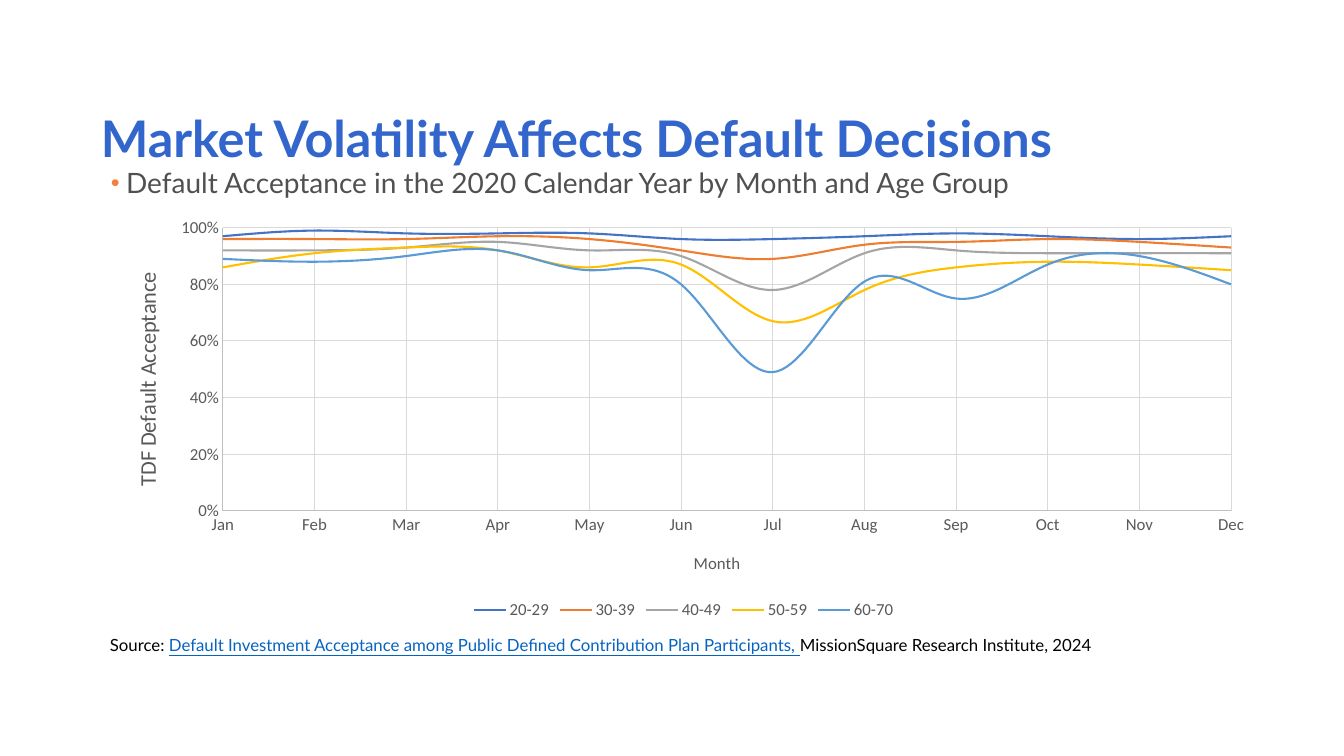
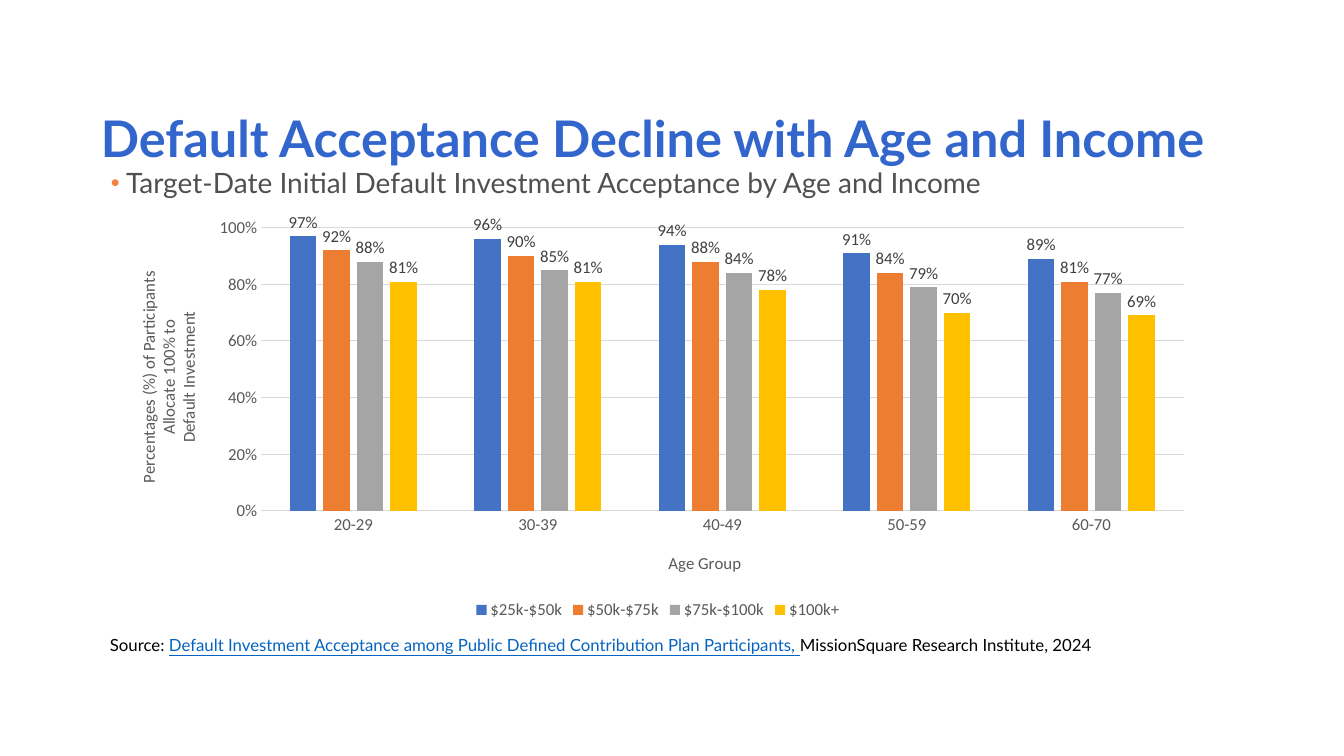
from dataclasses import dataclass

from lxml.etree import SubElement
from pptx import Presentation
from pptx.chart.data import CategoryChartData
from pptx.dml.color import RGBColor
from pptx.enum.chart import (XL_CHART_TYPE as Kind, XL_LABEL_POSITION as LabelPosition,
                             XL_LEGEND_POSITION as LegendPosition, XL_TICK_MARK as Tick)
from pptx.enum.text import MSO_ANCHOR as Anchor, MSO_AUTO_SIZE as AutoSize, PP_ALIGN as Align
from pptx.oxml.ns import qn
from pptx.util import Pt

PX = 9144  # EMU; 100 px to the inch


@dataclass(frozen=True)
class Theme:
    text_font: str = "Lato"
    chart_font: str = "Calibri"
    title: str = "3366CC"
    body: str = "505050"
    bullet: str = "F28041"
    source: str = "000000"
    link: str = "0563C1"
    axis_text: str = "595959"
    label_text: str = "404040"
    axis_line: str = "BFBFBF"
    grid: str = "D9D9D9"
    series: tuple = ("4472C4", "ED7D31", "A5A5A5", "FFC000", "5B9BD5")
    title_size: int = 36
    body_size: int = 20
    axis_title_size: int = 16
    small_size: int = 12


def rgb(code):
    return RGBColor.from_string(code)


def style_font(font, name, size, color, bold=False):
    font.name, font.size, font.bold = name, Pt(size), bold
    font.color.rgb = rgb(color)


def style_line(line, color, width=0.75):
    line.color.rgb = rgb(color)
    line.width = Pt(width)


def set_layout(parent, frame, left, top, width=None, height=None):
    """Fix a chart part at slide px, written as fractions of the chart frame."""
    layout = parent.find(qn("c:layout"))
    if layout is None:
        layout = SubElement(parent, qn("c:layout"))
        text = parent.find(qn("c:tx"))
        if text is None:
            parent.insert(0, layout)
        else:
            text.addnext(layout)
    for old in list(layout):
        layout.remove(old)
    manual = SubElement(layout, qn("c:manualLayout"))
    values = {"xMode": "edge", "yMode": "edge",
              "x": (left * PX - frame.left) / frame.width,
              "y": (top * PX - frame.top) / frame.height}
    if width:
        values = {"layoutTarget": "inner", **values,
                  "w": width * PX / frame.width, "h": height * PX / frame.height}
    for tag, value in values.items():
        SubElement(manual, qn(f"c:{tag}")).set("val", str(value))


class Deck:
    def __init__(self, theme):
        self.theme = theme
        self.file = Presentation()
        self.file.slide_width, self.file.slide_height = 1333 * PX, 750 * PX
        self.page = None

    def add_page(self, title, subtitle):
        self.page = self.file.slides.add_slide(self.file.slide_layouts[1])
        self.add_title(title)
        self.add_bullet(subtitle)
        self.add_source()

    def prepare(self, box, left, top, width, height, anchor=Anchor.TOP):
        """Place a text shape without insets and return its first paragraph."""
        box.left, box.top, box.width, box.height = (n * PX for n in (left, top, width, height))
        frame = box.text_frame
        frame.margin_left = frame.margin_right = frame.margin_top = frame.margin_bottom = 0
        frame.word_wrap, frame.auto_size, frame.vertical_anchor = True, AutoSize.NONE, anchor
        para = frame.paragraphs[0]
        para.alignment, para.space_before = Align.LEFT, Pt(0)
        return para

    def add_span(self, para, text, size, color, bold=False):
        span = para.add_run()
        span.text = text
        style_font(span.font, self.theme.text_font, size, color, bold)
        return span

    def add_title(self, text):
        para = self.prepare(self.page.shapes.title, 100, 100, 1115, 130)
        para.line_spacing = 1.1
        self.add_span(para, text, self.theme.title_size, self.theme.title, True)

    def add_bullet(self, text):
        para = self.prepare(self.page.placeholders[1], 100, 161, 1116, 48)
        props = para._p.get_or_add_pPr()
        props.set("marL", str(25 * PX))
        props.set("indent", str(-15 * PX))
        color = SubElement(props, qn("a:buClr"))
        SubElement(color, qn("a:srgbClr")).set("val", self.theme.bullet)
        SubElement(props, qn("a:buSzPct")).set("val", "90000")
        SubElement(props, qn("a:buFont")).set("typeface", "Arial")
        SubElement(props, qn("a:buChar")).set("char", "•")
        para.line_spacing, para.space_after = 1.1, Pt(6)
        self.add_span(para, text, self.theme.body_size, self.theme.body)

    def add_source(self):
        theme = self.theme
        box = self.page.shapes.add_textbox(0, 0, PX, PX)
        para = self.prepare(box, 109, 614, 1035, 36, Anchor.BOTTOM)
        para.line_spacing = 0.9
        self.add_span(para, "Source: ", theme.small_size, theme.source)
        link = self.add_span(para, "Default Investment Acceptance among Public Defined "
                             "Contribution Plan Participants, ", theme.small_size, theme.link)
        link.font.underline = True
        self.add_span(para, "MissionSquare Research Institute, 2024",
                      theme.small_size, theme.source)

    def add_chart(self, kind, place, plot_area, categories, series):
        """Add a percentage chart; return its frame."""
        theme = self.theme
        data = CategoryChartData(number_format="0%")
        data.categories = categories
        for name, percents in series.items():
            data.add_series(name, [percent / 100 for percent in percents])
        frame = self.page.shapes.add_chart(kind, *(n * PX for n in place), data)
        chart = frame.chart
        style_font(chart.font, theme.chart_font, theme.small_size, theme.source)
        chart.has_title = False
        chart.has_legend = True
        chart.legend.position = LegendPosition.BOTTOM
        chart.legend.include_in_layout = False
        style_font(chart.legend.font, theme.chart_font, theme.small_size, theme.axis_text)
        chart.plots[0].vary_by_categories = False
        for axis in (chart.category_axis, chart.value_axis):
            axis.major_tick_mark = axis.minor_tick_mark = Tick.NONE
            style_font(axis.tick_labels.font, theme.chart_font, theme.small_size,
                       theme.axis_text)
        values = chart.value_axis
        values.minimum_scale, values.maximum_scale, values.major_unit = 0, 1, 0.2
        values.tick_labels.number_format = "0%"
        values.tick_labels.number_format_is_linked = False
        values.has_major_gridlines = True
        style_line(values.major_gridlines.format.line, theme.grid)
        set_layout(chart.element.xpath(".//c:plotArea")[0], frame, *plot_area)
        return frame

    def add_axis_title(self, frame, axis, lines, left, top, size):
        axis.has_title = True
        text = axis.axis_title.text_frame
        for index, line in enumerate(lines):
            para = text.add_paragraph() if index else text.paragraphs[0]
            span = para.add_run()
            span.text = line
            style_font(span.font, self.theme.chart_font, size, self.theme.axis_text)
        set_layout(axis.axis_title._element, frame, left, top)

    def add_line_chart(self, place, plot_area, categories, series):
        theme = self.theme
        frame = self.add_chart(Kind.LINE, place, plot_area, categories, series)
        chart = frame.chart
        for line, color in zip(chart.plots[0].series, theme.series):
            line.smooth = True
            style_line(line.format.line, color, 1.5)
        months = chart.category_axis
        months.has_major_gridlines = True
        style_line(months.major_gridlines.format.line, theme.grid)
        for axis in (months, chart.value_axis):
            style_line(axis.format.line, theme.axis_line)
        value_axis = chart.element.xpath(".//c:valAx")[0]
        for old in value_axis.findall(qn("c:crossBetween")):
            value_axis.remove(old)
        crossing = SubElement(value_axis, qn("c:crossBetween"))
        crossing.set("val", "midCat")
        value_axis.find(qn("c:crosses")).addnext(crossing)
        return frame

    def add_column_chart(self, place, plot_area, categories, series):
        theme = self.theme
        frame = self.add_chart(Kind.COLUMN_CLUSTERED, place, plot_area, categories, series)
        chart = frame.chart
        plot = chart.plots[0]
        plot.gap_width, plot.overlap = 219, -27
        for column, color in zip(plot.series, theme.series):
            column.format.fill.solid()
            column.format.fill.fore_color.rgb = rgb(color)
            labels = column.data_labels
            labels.show_value, labels.position = True, LabelPosition.OUTSIDE_END
            labels.number_format, labels.number_format_is_linked = "0%", False
            style_font(labels.font, theme.chart_font, theme.small_size, theme.label_text)
        style_line(chart.category_axis.format.line, theme.grid)
        chart.value_axis.format.line.fill.background()
        return frame


def add_volatility_page(deck):
    deck.add_page("Market Volatility Affects Default Decisions",
                  "Default Acceptance in the 2020 Calendar Year by Month and Age Group")
    frame = deck.add_line_chart(
        (99, 208, 1158, 411), (221, 226, 1000, 281),
        "Jan Feb Mar Apr May Jun Jul Aug Sep Oct Nov Dec".split(),
        {"20-29": (97, 99, 98, 98, 98, 96, 96, 97, 98, 97, 96, 97),
         "30-39": (96, 96, 96, 97, 96, 92, 89, 94, 95, 96, 95, 93),
         "40-49": (92, 92, 93, 95, 92, 90, 78, 91, 92, 91, 91, 91),
         "50-59": (86, 91, 93, 92, 86, 87, 67, 78, 86, 88, 87, 85),
         "60-70": (89, 88, 90, 92, 85, 80, 49, 81, 75, 87, 90, 80)})
    chart, theme = frame.chart, deck.theme
    deck.add_axis_title(frame, chart.category_axis, ["Month"], 685, 544, theme.small_size)
    deck.add_axis_title(frame, chart.value_axis, ["TDF Default Acceptance"], 127, 266,
                        theme.axis_title_size)


def add_income_page(deck):
    deck.add_page("Default Acceptance Decline with Age and Income",
                  "Target-Date Initial Default Investment Acceptance by Age and Income")
    frame = deck.add_column_chart(
        (109, 208, 1087, 411), (259, 226, 915, 281),
        ["20-29", "30-39", "40-49", "50-59", "60-70"],
        {"$25k-$50k": (97, 96, 94, 91, 89),
         "$50k-$75k": (92, 90, 88, 84, 81),
         "$75k-$100k": (88, 85, 84, 79, 77),
         "$100k+": (81, 81, 78, 70, 69)})
    chart, size = frame.chart, deck.theme.small_size
    deck.add_axis_title(frame, chart.category_axis, ["Age Group"], 660, 544, size)
    deck.add_axis_title(frame, chart.value_axis,
                        ["Percentages (%) of Participants", "Allocate 100% to",
                         "Default Investment"], 133, 266, size)


def main():
    deck = Deck(Theme())
    add_volatility_page(deck)
    add_income_page(deck)
    deck.file.save("out.pptx")


if __name__ == "__main__":
    main()
